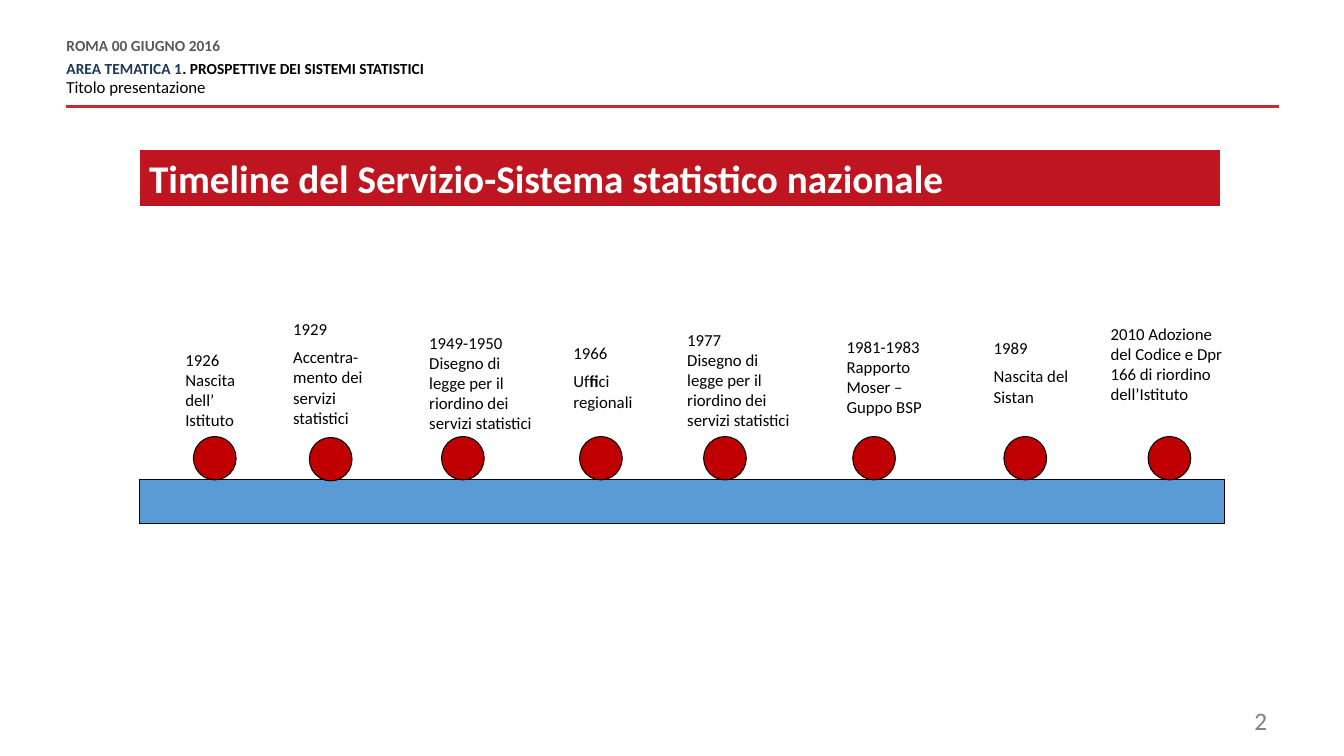
from dataclasses import dataclass, field

from pptx import Presentation
from pptx.dml.color import RGBColor
from pptx.enum.shapes import MSO_CONNECTOR, MSO_SHAPE
from pptx.enum.text import MSO_ANCHOR, MSO_AUTO_SIZE, PP_ALIGN
from pptx.oxml.ns import qn
from pptx.util import Pt

RECTANGLE, OVAL = MSO_SHAPE.RECTANGLE, MSO_SHAPE.OVAL
STRAIGHT = MSO_CONNECTOR.STRAIGHT
TOP, MIDDLE = MSO_ANCHOR.TOP, MSO_ANCHOR.MIDDLE
LEFT, RIGHT = PP_ALIGN.LEFT, PP_ALIGN.RIGHT
GROW = MSO_AUTO_SIZE.SHAPE_TO_FIT_TEXT

FONT = "Calibri"
BLACK, WHITE = "000000", "FFFFFF"
DOT_WIDTH, DOT_HEIGHT, DOT_TOP = 30.5, 31, 311.8


@dataclass
class Run:
    text: str
    size: float = 12
    color: str = BLACK
    bold: bool = False


@dataclass
class Line:
    runs: list[Run]
    layout: dict = field(default_factory=dict)


@dataclass
class Box:
    left: float
    top: float
    width: float
    height: float

    def lengths(self) -> list[Pt]:
        return [Pt(value) for value in (self.left, self.top, self.width, self.height)]


@dataclass
class Milestone:
    box: Box
    dot_left: float
    lines: list[Line]
    dot_top: float = DOT_TOP


def rgb(color: str) -> RGBColor:
    return RGBColor.from_string(color)


def apply(target, values: dict) -> None:
    for name, value in values.items():
        setattr(target, name, value)


def write(shape, lines: list[Line], anchor=TOP, margins: dict | None = None) -> None:
    frame = shape.text_frame
    apply(frame, {"word_wrap": True, "auto_size": GROW, "vertical_anchor": anchor})
    apply(frame, margins or {})
    for index, line in enumerate(lines):
        paragraph = frame.add_paragraph() if index else frame.paragraphs[0]
        apply(paragraph, {"alignment": LEFT, **line.layout})
        for part in line.runs:
            run = paragraph.add_run()
            run.text = part.text
            apply(run.font, {"name": FONT, "size": Pt(part.size), "bold": part.bold})
            run.font.color.rgb = rgb(part.color)


def add_text(slide, box: Box, lines: list[Line], **options) -> None:
    write(slide.shapes.add_textbox(*box.lengths()), lines, **options)


def add_block(slide, kind, box: Box, fill: str, outline: str = BLACK):
    shape = slide.shapes.add_shape(kind, *box.lengths())
    shape.shadow.inherit = False
    shape.fill.solid()
    shape.fill.fore_color.rgb = rgb(fill)
    shape.line.color.rgb = rgb(outline)
    shape.line.width = Pt(0.75)
    return shape


def add_rule(slide, left: float, right: float, top: float) -> None:
    rule = slide.shapes.add_connector(STRAIGHT, Pt(left), Pt(top), Pt(right), Pt(top))
    rule.line.color.rgb = rgb("C72A31")
    rule.line.width = Pt(2)
    properties = rule._element.spPr
    properties.append(properties.makeelement(qn("a:effectLst"), {}))


def plain(*texts: str, gap: float = 0) -> list[Line]:
    return [Line([Run(text)], {"space_before": Pt(gap if index else 0)})
            for index, text in enumerate(texts)]


REFORM = "Disegno di legge per il riordino dei servizi statistici"
HEADER = [
    Line([Run("ROMA 00 GIUGNO 2016", 11, "595959", True)],
         {"line_spacing": Pt(10.8), "space_after": Pt(6)}),
    Line([Run("AREA TEMATICA 1", 11, "1C385A", True),
          Run(". PROSPETTIVE DEI SISTEMI STATISTICI", 11, BLACK, True)],
         {"line_spacing": Pt(10.8)}),
    Line([Run("Titolo presentazione")],
         {"line_spacing": Pt(10.8), "space_before": Pt(3), "space_after": Pt(6)}),
]
OFFICES = [
    Line([Run("1966")]),
    Line([Run("Uf"), Run("fi", bold=True), Run("ci regionali")],
         {"space_before": Pt(6)}),
]
MILESTONES = [
    Milestone(Box(125.3, 246.2, 55.4, 65.5), 138.2,
              plain("1926 Nascita dell’ Istituto")),
    Milestone(Box(202.3, 223.9, 67.7, 87.1), 221,
              plain("1929", "Accentra-mento dei servizi statistici", gap=6), 312.5),
    Milestone(Box(299.5, 234, 92.2, 79.2), 315.4, plain("1949-1950", REFORM)),
    Milestone(Box(402.5, 241.2, 80.6, 57.6), 414, OFFICES),
    Milestone(Box(483.8, 231.8, 92.2, 79.2), 502.6, plain("1977", REFORM)),
    Milestone(Box(597.6, 236.9, 72.7, 64.8), 609.1,
              plain("1981-1983 Rapporto Moser – Guppo BSP")),
    Milestone(Box(702.7, 237.6, 67.7, 57.6), 717.1,
              plain("1989", "Nascita del Sistan", gap=6)),
    Milestone(Box(786.2, 227.5, 97.9, 79.9), 820.1,
              plain("2010 Adozione del Codice e Dpr 166 di riordino dell’Istituto")),
]


def main() -> None:
    presentation = Presentation()
    presentation.slide_width, presentation.slide_height = Pt(960), Pt(540)
    slide = presentation.slides.add_slide(presentation.slide_layouts[6])

    # Header with its rule
    add_rule(slide, 47.5, 913.7, 76.3)
    no_margins = {f"margin_{side}": Pt(0) for side in ("left", "top", "right", "bottom")}
    add_text(slide, Box(47.5, 28.1, 600.5, 42.5), HEADER, margins=no_margins)

    # Title band
    title = add_block(slide, RECTANGLE, Box(99.4, 106.6, 772.6, 41), "BE1520", WHITE)
    write(title, [Line([Run("Timeline del Servizio-Sistema statistico nazionale",
                            28, WHITE, True)])])

    # Timeline bar and milestones
    add_block(slide, RECTANGLE, Box(99.4, 342.7, 775.4, 31), "5B9BD5")
    for milestone in MILESTONES:
        dot = Box(milestone.dot_left, milestone.dot_top, DOT_WIDTH, DOT_HEIGHT)
        add_block(slide, OVAL, dot, "C00000")
        add_text(slide, milestone.box, milestone.lines)

    # Slide number
    add_text(slide, Box(688.3, 500.4, 223.9, 28.8),
             [Line([Run("2", 18, "7F7F7F")], {"alignment": RIGHT})], anchor=MIDDLE)

    presentation.save("out.pptx")


if __name__ == "__main__":
    main()
